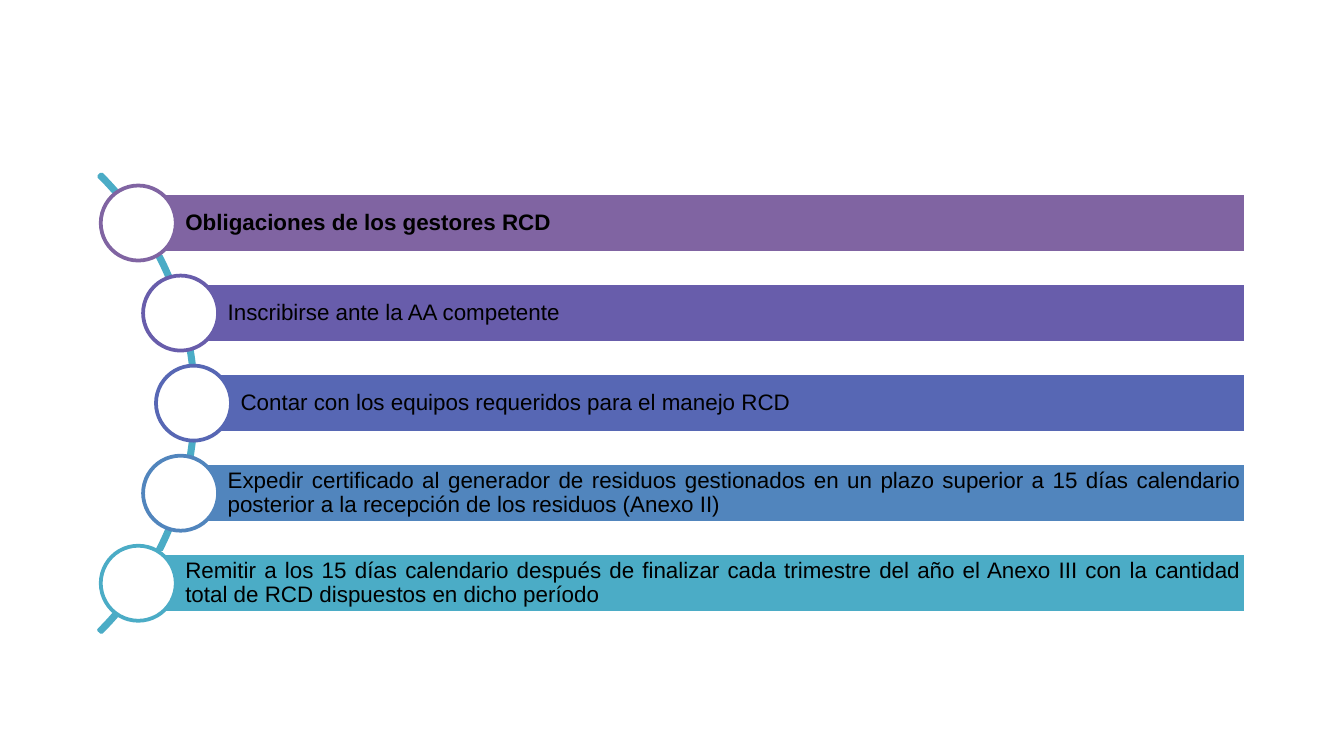
from math import sqrt

from pptx import Presentation
from pptx.dml.color import RGBColor
from pptx.enum.shapes import MSO_SHAPE as SHAPE
from pptx.enum.text import MSO_ANCHOR as ANCHOR, PP_ALIGN as ALIGN
from pptx.util import Inches, Pt

WHITE = RGBColor(0xFF, 0xFF, 0xFF)
BLACK = RGBColor(0x00, 0x00, 0x00)
PURPLE = RGBColor(0x80, 0x64, 0xA2)
VIOLET = RGBColor(0x68, 0x5D, 0xAB)
INDIGO = RGBColor(0x57, 0x67, 0xB4)
BLUE = RGBColor(0x51, 0x85, 0xBD)
TEAL = RGBColor(0x4B, 0xAC, 0xC6)

ITEMS = [
    ("Obligaciones de los gestores RCD", PURPLE),
    ("Inscribirse ante la AA competente", VIOLET),
    ("Contar con los equipos requeridos para el manejo RCD", INDIGO),
    ("Expedir certificado al generador de residuos gestionados en un plazo "
     "superior a 15 días calendario posterior a la recepción de los residuos "
     "(Anexo II)", BLUE),
    ("Remitir a los 15 días calendario después de finalizar cada trimestre "
     "del año el Anexo III con la cantidad total de RCD dispuestos en dicho "
     "período", TEAL),
]

# All in inches; the circles follow a track just inside the arc, one per row
ARC_X, ARC_Y = -0.95, 3.0
ARC_RADIUS, TRACK_RADIUS = 2.41, 2.39
ROW = 0.67
BAR_H = ROW * 2 / 3
CIRCLE = BAR_H * 5 / 4
RIGHT = 9.27

prs = Presentation()
prs.slide_width = Inches(10)
prs.slide_height = prs.slide_width * 9 // 16
s = prs.slides.add_slide(prs.slide_layouts[6])


def add_outlined(kind, x, y, w, h, fill, line):
    sp = s.shapes.add_shape(kind, Inches(x), Inches(y), Inches(w), Inches(h))
    sp.shadow.inherit = False
    if fill is None:
        sp.fill.background()
    else:
        sp.fill.solid()
        sp.fill.fore_color.rgb = fill
    sp.line.color.rgb = line
    sp.line.width = Pt(2)
    return sp


def write(sp, text, *, size, color, bold=False):
    tf = sp.text_frame
    tf.word_wrap = True
    tf.vertical_anchor = ANCHOR.MIDDLE
    tf.margin_left = Inches(0.35)
    tf.margin_top = tf.margin_right = tf.margin_bottom = Inches(0.03)
    p = tf.paragraphs[0]
    p.alignment = ALIGN.JUSTIFY
    p.line_spacing = 0.9
    r = p.add_run()
    r.text = text
    r.font.name = "Arial"
    r.font.size = Pt(size)
    r.font.bold = bold
    r.font.color.rgb = color


arc = add_outlined(SHAPE.BLOCK_ARC, ARC_X - ARC_RADIUS, ARC_Y - ARC_RADIUS,
                   2 * ARC_RADIUS, 2 * ARC_RADIUS, None, TEAL)
# Start angle, end angle (315° and 45°) and band thickness
for i, value in enumerate((189, 27, 0.005)):
    arc.adjustments[i] = value

for i, (text, color) in enumerate(ITEMS):
    dy = (i - (len(ITEMS) - 1) / 2) * ROW
    x, y = ARC_X + sqrt(TRACK_RADIUS ** 2 - dy ** 2), ARC_Y + dy
    bar = add_outlined(SHAPE.RECTANGLE, x, y - BAR_H / 2, RIGHT - x, BAR_H,
                       color, WHITE)
    write(bar, text, size=12, color=BLACK, bold=i == 0)
    add_outlined(SHAPE.OVAL, x - CIRCLE / 2, y - CIRCLE / 2, CIRCLE, CIRCLE,
                 WHITE, color)

prs.save("out.pptx")
